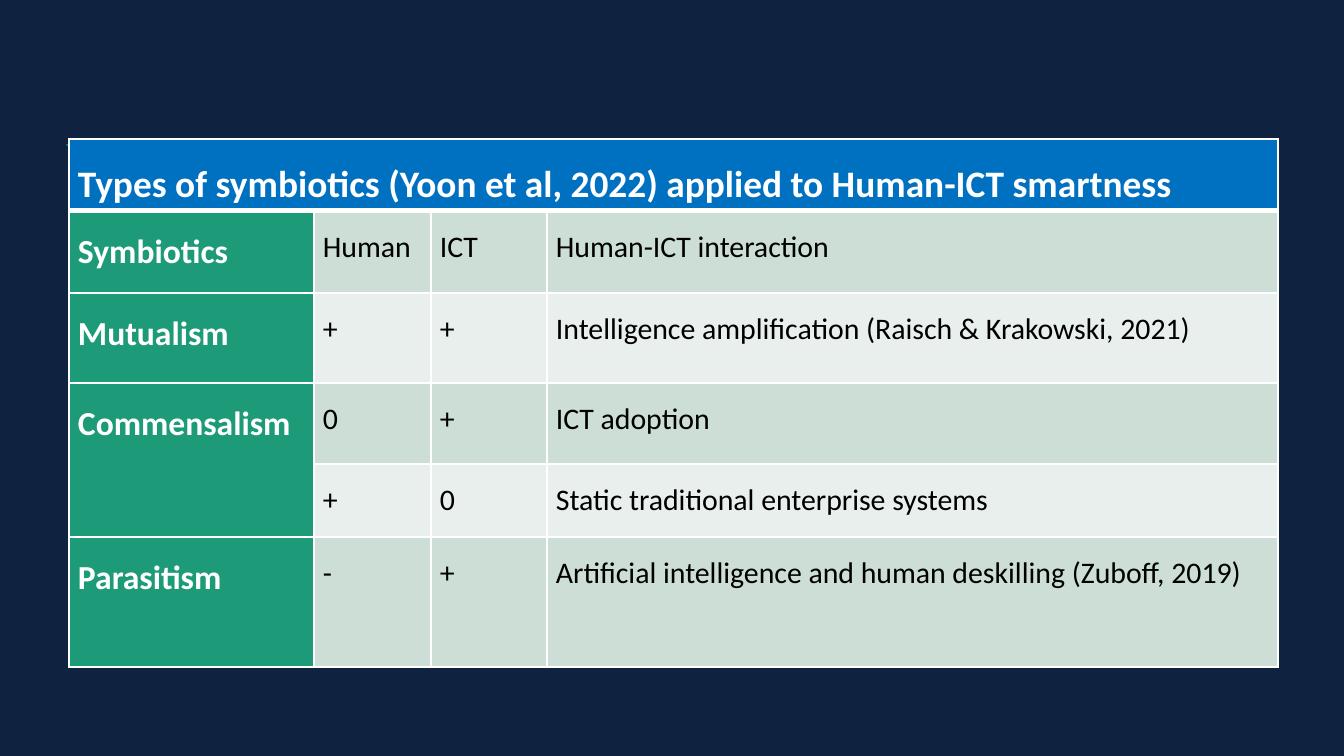
from lxml import etree
from pptx import Presentation
from pptx.dml.color import RGBColor
from pptx.enum.shapes import MSO_SHAPE
from pptx.enum.text import PP_ALIGN
from pptx.oxml.ns import qn
from pptx.util import Emu, Pt

RECT = MSO_SHAPE.RECTANGLE
JUSTIFY = PP_ALIGN.JUSTIFY

NAVY = RGBColor(0x0F, 0x23, 0x40)
TEAL = RGBColor(0x0D, 0x7C, 0x7A)
BLUE = RGBColor(0x00, 0x70, 0xC0)
GREEN = RGBColor(0x1D, 0x9A, 0x78)
BANDS = [RGBColor(0xE8, 0xEF, 0xEC), RGBColor(0xCD, 0xDE, 0xD6)]
WHITE = RGBColor(0xFF, 0xFF, 0xFF)
BLACK = RGBColor(0x00, 0x00, 0x00)

TITLE = {"size": Pt(20), "bold": True}
LABEL = {"size": Pt(18), "bold": True}
BODY = {"size": Pt(16), "bold": False}

COL_WIDTHS = [245, 117, 116, 731]
ROW_HEIGHTS = [72, 82, 90, 81, 73, 130]
ROWS = [
    ["Types of symbiotics (Yoon et al, 2022) applied to Human-ICT smartness", "", "", ""],
    ["Symbiotics", "Human", "ICT", "Human-ICT interaction"],
    ["Mutualism", "+", "+", "Intelligence amplification (Raisch & Krakowski, 2021)"],
    ["Commensalism", "0", "+", "ICT adoption"],
    ["", "+", "0", "Static traditional enterprise systems"],
    ["Parasitism", "-", "+", "Artificial intelligence and human deskilling (Zuboff, 2019)"],
]


def px(n):
    return Emu(round(n * 914400 / 134.4))


def set_borders(cell, widths):
    """Give the cell white borders; widths maps each side (L, R, T, B) to points."""
    tcPr = cell._tc.get_or_add_tcPr()
    for i, (side, width) in enumerate(widths.items()):
        ln = etree.Element(qn(f"a:ln{side}"), w=str(Pt(width)))
        fill = etree.SubElement(ln, qn("a:solidFill"))
        etree.SubElement(fill, qn("a:srgbClr"), val=str(WHITE))
        tcPr.insert(i, ln)


prs = Presentation()
prs.slide_width, prs.slide_height = px(1344), px(756)
s = prs.slides.add_slide(prs.slide_layouts[6])
s.background.fill.solid()
s.background.fill.fore_color.rgb = NAVY

rule = s.shapes.add_shape(RECT, px(67), px(145), px(1210), px(0))
rule.shadow.inherit = False
rule.fill.background()
rule.line.color.rgb = TEAL
rule.line.width = Pt(1)

table = s.shapes.add_table(
    len(ROWS), len(COL_WIDTHS), px(69), px(139), px(sum(COL_WIDTHS)), px(sum(ROW_HEIGHTS))
).table
table.first_row = table.horz_banding = False
for col, width in zip(table.columns, COL_WIDTHS):
    col.width = px(width)
for row, height in zip(table.rows, ROW_HEIGHTS):
    row.height = px(height)
table.cell(0, 0).merge(table.cell(0, 3))
table.cell(3, 0).merge(table.cell(4, 0))

for r, texts in enumerate(ROWS):
    for c, text in enumerate(texts):
        cell = table.cell(r, c)
        if r == 0:
            fill, color, style = BLUE, WHITE, TITLE
        elif c == 0:
            fill, color, style = GREEN, WHITE, LABEL
        else:
            fill, color, style = BANDS[r % 2], BLACK, BODY
        cell.fill.solid()
        cell.fill.fore_color.rgb = fill
        set_borders(cell, {"L": 1, "R": 1, "T": 3 if r == 1 else 1, "B": 3 if r == 0 else 1})
        cell.margin_left = cell.margin_right = px(9)
        cell.margin_top = cell.margin_bottom = 0
        if not text:
            continue
        p = cell.text_frame.paragraphs[0]
        p.alignment = JUSTIFY
        p.line_spacing = 1.5
        p.space_after = Pt(8)
        run = p.add_run()
        run.text = text
        run.font.name = "Calibri"
        run.font.color.rgb = color
        for name, value in style.items():
            setattr(run.font, name, value)

prs.save("out.pptx")
